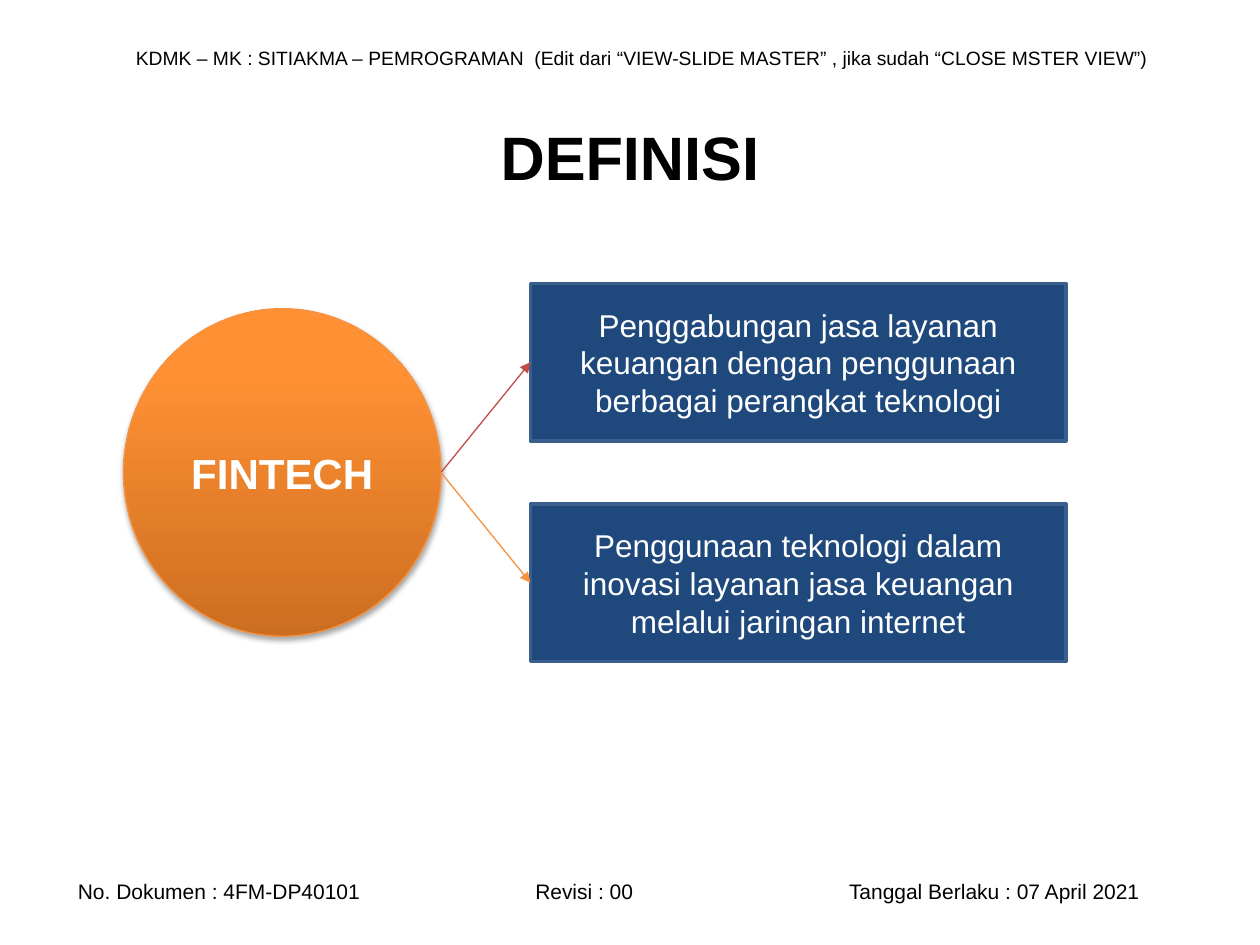
"""Builds the FINTECH definition slide with its document header and footer."""
from copy import deepcopy

from lxml.etree import SubElement
from pptx import Presentation
from pptx.dml.color import RGBColor
from pptx.enum.shapes import MSO_CONNECTOR as Connector, MSO_SHAPE as Shape
from pptx.enum.text import MSO_ANCHOR as Anchor, PP_ALIGN as Align
from pptx.oxml.ns import qn
from pptx.util import Inches, Pt

BLACK = RGBColor(0x00, 0x00, 0x00)
WHITE = RGBColor(0xFF, 0xFF, 0xFF)
NAVY = RGBColor(0x1F, 0x49, 0x7D)
NAVY_EDGE = RGBColor(0x3A, 0x5F, 0x8C)
ORANGE = RGBColor(0xF6, 0x92, 0x40)
RED = RGBColor(0xBF, 0x4C, 0x48)
CIRCLE_STOPS = [
    (0, RGBColor(0xCC, 0x6E, 0x20)),
    (0.8, RGBColor(0xFF, 0x90, 0x34)),
    (1, RGBColor(0xFF, 0x91, 0x36)),
]

deck = Presentation()
deck.slide_width, deck.slide_height = Inches(10), Inches(7.5)
page = deck.slides.add_slide(deck.slide_layouts[5])
COLUMN, ROW = deck.slide_width / 100, deck.slide_height / 75


def cells(left, top, width, height):
    return int(left * COLUMN), int(top * ROW), int(width * COLUMN), int(height * ROW)


def write(box, text, size, color, align=Align.CENTER, bold=False):
    frame = box.text_frame
    frame.word_wrap = True
    frame.vertical_anchor = Anchor.MIDDLE
    para = frame.paragraphs[0]
    para.alignment = align
    span = para.add_run()
    span.text = text
    span.font.name = "Arial"
    span.font.size = Pt(size)
    span.font.bold = bold
    span.font.color.rgb = color
    return para


header = page.shapes.add_textbox(*cells(9.8, 3.1, 83.5, 2.9))
write(header, "KDMK – MK : SITIAKMA – PEMROGRAMAN  (Edit dari “VIEW-SLIDE MASTER” , "
      "jika sudah “CLOSE MSTER VIEW”)", 11, BLACK, Align.JUSTIFY)

footer = page.shapes.add_textbox(*cells(5.2, 69.2, 91.3, 3))
footer_line = write(footer, "No. Dokumen : 4FM-DP40101\tRevisi : 00\t"
                    "Tanggal Berlaku : 07 April 2021", 12, BLACK, Align.LEFT)
tab_list = SubElement(footer_line._p.get_or_add_pPr(), qn("a:tabLst"))
for stop in (36.3, 61.2):
    SubElement(tab_list, qn("a:tab"), pos=str(int(stop * COLUMN)), algn="l")

title = page.shapes.title
title.left, title.top, title.width, title.height = cells(5, 6.1, 90, 12.5)
write(title, "DEFINISI", 35, BLACK, bold=True)

definitions = []
for index, text in enumerate((
    "Penggabungan jasa layanan keuangan dengan penggunaan berbagai perangkat teknologi",
    "Penggunaan teknologi dalam inovasi layanan jasa keuangan melalui jaringan internet",
)):
    box = page.shapes.add_shape(Shape.RECTANGLE, *cells(42.1, 22.5 + 17.5 * index, 42.5, 12.5))
    box.shadow.inherit = False
    box.fill.solid()
    box.fill.fore_color.rgb = NAVY
    box.line.color.rgb = NAVY_EDGE
    box.line.width = Pt(2)
    write(box, text, 18, WHITE)
    definitions.append(box)

circle = page.shapes.add_shape(Shape.OVAL, *cells(9.8, 24.5, 25.2, 26))
circle.line.color.rgb = ORANGE
circle.line.width = Pt(0.75)
circle.fill.gradient()
circle.fill.gradient_angle = 90
stop_list = circle._element.spPr.find(qn("a:gradFill")).find(qn("a:gsLst"))
stop_list.append(deepcopy(stop_list[-1]))
for stop, (position, color) in zip(circle.fill.gradient_stops, CIRCLE_STOPS):
    stop.position = position
    stop.color.rgb = color
circle.shadow.inherit = False
shadow = SubElement(circle._element.spPr.find(qn("a:effectLst")), qn("a:outerShdw"),
                    blurRad=str(Pt(3.1)), dist=str(Pt(1.8)), dir="5400000", rotWithShape="0")
shadow_color = SubElement(shadow, qn("a:srgbClr"), val=str(BLACK))
SubElement(shadow_color, qn("a:alpha"), val="35000")
write(circle, "FINTECH", 24, WHITE, bold=True)

start_x, start_y = circle.left + circle.width, circle.top + circle.height // 2
for box, color in zip(definitions, (RED, ORANGE)):
    arrow = page.shapes.add_connector(Connector.STRAIGHT, start_x, start_y,
                                      box.left, box.top + box.height // 2)
    arrow.end_connect(box, 1)
    arrow.line.color.rgb = color
    arrow.line.width = Pt(0.75)
    SubElement(arrow.line._get_or_add_ln(), qn("a:tailEnd"), type="triangle")
    SubElement(arrow._element.spPr, qn("a:effectLst"))

deck.save("out.pptx")
